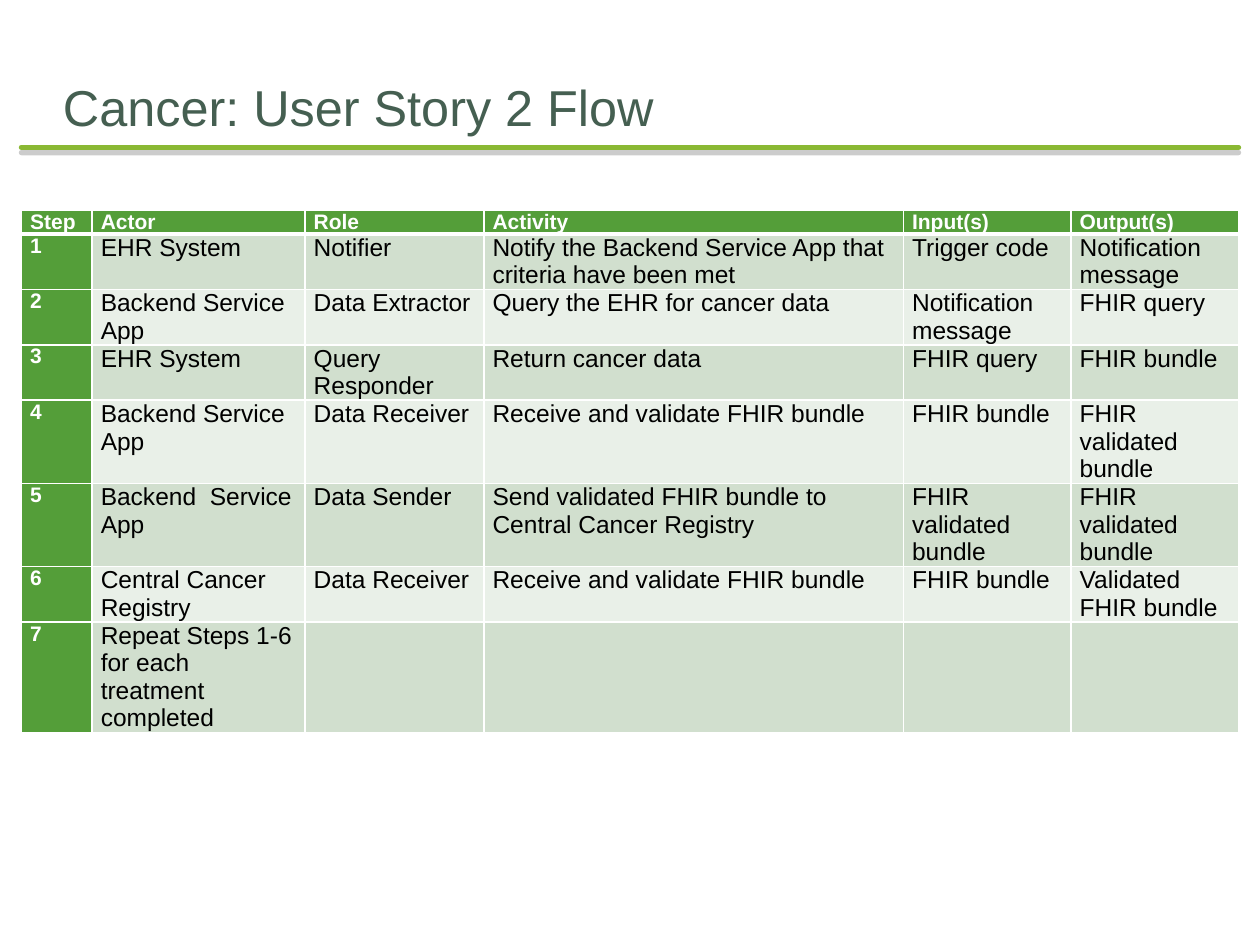
from lxml import etree
from pptx import Presentation
from pptx.dml.color import RGBColor
from pptx.enum.shapes import MSO_CONNECTOR
from pptx.enum.text import MSO_ANCHOR, MSO_AUTO_SIZE
from pptx.oxml import parse_xml
from pptx.oxml.ns import nsdecls, qn
from pptx.util import Inches, Pt

STRAIGHT = MSO_CONNECTOR.STRAIGHT
BOTTOM = MSO_ANCHOR.BOTTOM
NO_FIT = MSO_AUTO_SIZE.NONE

TITLE = "Cancer: User Story 2 Flow"
HEADERS = ["Step", "Actor", "Role", "Activity", "Input(s)", "Output(s)"]
STEPS = [
    ["EHR System", "Notifier",
     "Notify the Backend Service App that criteria have been met",
     "Trigger code", "Notification message"],
    ["Backend Service App", "Data Extractor", "Query the EHR for cancer data",
     "Notification message", "FHIR query"],
    ["EHR System", "Query Responder", "Return cancer data",
     "FHIR query", "FHIR bundle"],
    ["Backend Service App", "Data Receiver", "Receive and validate FHIR bundle",
     "FHIR bundle", "FHIR validated bundle"],
    ["Backend  Service App", "Data Sender",
     "Send validated FHIR bundle to Central Cancer Registry",
     "FHIR validated bundle", "FHIR validated bundle"],
    ["Central Cancer Registry", "Data Receiver",
     "Receive and validate FHIR bundle", "FHIR bundle", "Validated FHIR bundle"],
    ["Repeat Steps 1-6 for each treatment completed", "", "", "", ""],
]
LINES_PER_STEP = [2, 2, 2, 3, 3, 2, 4]
COLUMN_WIDTHS = [0.56, 1.69, 1.42, 3.33, 1.33, 1.33]
HEADER_HEIGHT, LINE_HEIGHT = 0.18, 0.22
WIDTH, HEIGHT = 10, 7.5
MARGIN, RULE_TOP, TABLE_TOP = 0.17, 1.17, 1.67
FONT = "Arial"
COLORS = {
    "title": "455F51", "rule": "8AB833", "shadow": "808080",
    "header": "549E39", "odd": "D1DFCE", "even": "E9F0E8",
    "white": "FFFFFF", "black": "000000",
}


def color(name):
    return RGBColor.from_string(COLORS[name])


def style_text(frame, size, color_name, bold=False):
    for para in frame.paragraphs:
        para.font.size = Pt(size)
        for span in para.runs:
            span.font.name = FONT
            span.font.size = Pt(size)
            span.font.bold = bold
            span.font.color.rgb = color(color_name)


def add_title(page):
    box = page.shapes.add_textbox(Inches(0.5), Inches(0.5), Inches(9), Inches(0.58))
    frame = box.text_frame
    frame.word_wrap = True
    frame.auto_size = NO_FIT
    frame.vertical_anchor = BOTTOM
    frame.margin_left = frame.margin_right = frame.margin_bottom = 0
    frame.margin_top = Inches(0.05)
    frame.text = TITLE
    style_text(frame, 28.8, "title")


def add_rule(page):
    rule = page.shapes.add_connector(
        STRAIGHT, Inches(MARGIN), Inches(RULE_TOP),
        Inches(WIDTH - MARGIN), Inches(RULE_TOP))
    rule.line.color.rgb = color("rule")
    rule.line.width = Pt(3)
    properties = rule._element.spPr
    properties.find(qn("a:ln")).set("cap", "rnd")
    properties.append(parse_xml(
        f'<a:effectLst {nsdecls("a")}>'
        f'<a:outerShdw blurRad="0" dist="{Pt(3)}" dir="5400000" rotWithShape="0">'
        f'<a:srgbClr val="{COLORS["shadow"]}"><a:alpha val="40000"/></a:srgbClr>'
        '</a:outerShdw></a:effectLst>'))


def set_borders(cell, top, bottom):
    properties = cell._tc.get_or_add_tcPr()
    sides = [("lnL", 1), ("lnR", 1), ("lnT", top), ("lnB", bottom)]
    for position, (side, width) in enumerate(sides):
        border = etree.Element(qn(f"a:{side}"), w=str(Pt(width)))
        fill = etree.SubElement(border, qn("a:solidFill"))
        etree.SubElement(fill, qn("a:srgbClr"), val=COLORS["white"])
        properties.insert(position, border)


def add_steps_table(page):
    rows = [HEADERS] + [[str(number), *step] for number, step in enumerate(STEPS, 1)]
    heights = [HEADER_HEIGHT] + [lines * LINE_HEIGHT for lines in LINES_PER_STEP]
    table = page.shapes.add_table(
        len(rows), len(HEADERS), Inches(MARGIN), Inches(TABLE_TOP),
        Inches(sum(COLUMN_WIDTHS)), Inches(sum(heights))).table
    table.horz_banding = False
    for column, width in zip(table.columns, COLUMN_WIDTHS):
        column.width = Inches(width)
    for r, (row, height) in enumerate(zip(rows, heights)):
        table.rows[r].height = Inches(height)
        for c, text in enumerate(row):
            cell = table.cell(r, c)
            cell.margin_left = cell.margin_right = Inches(0.07)
            cell.margin_top = cell.margin_bottom = 0
            cell.text_frame.text = text
            cell.fill.solid()
            if r == 0 or c == 0:
                cell.fill.fore_color.rgb = color("header")
                style_text(cell.text_frame, 12, "white", bold=True)
            else:
                cell.fill.fore_color.rgb = color("odd" if r % 2 else "even")
                style_text(cell.text_frame, 14, "black")
            set_borders(cell, top=3 if r == 1 else 1, bottom=3 if r == 0 else 1)


def main():
    deck = Presentation()
    deck.slide_width, deck.slide_height = Inches(WIDTH), Inches(HEIGHT)
    page = deck.slides.add_slide(deck.slide_layouts[6])
    add_rule(page)
    add_title(page)
    add_steps_table(page)
    deck.save("out.pptx")


if __name__ == "__main__":
    main()
